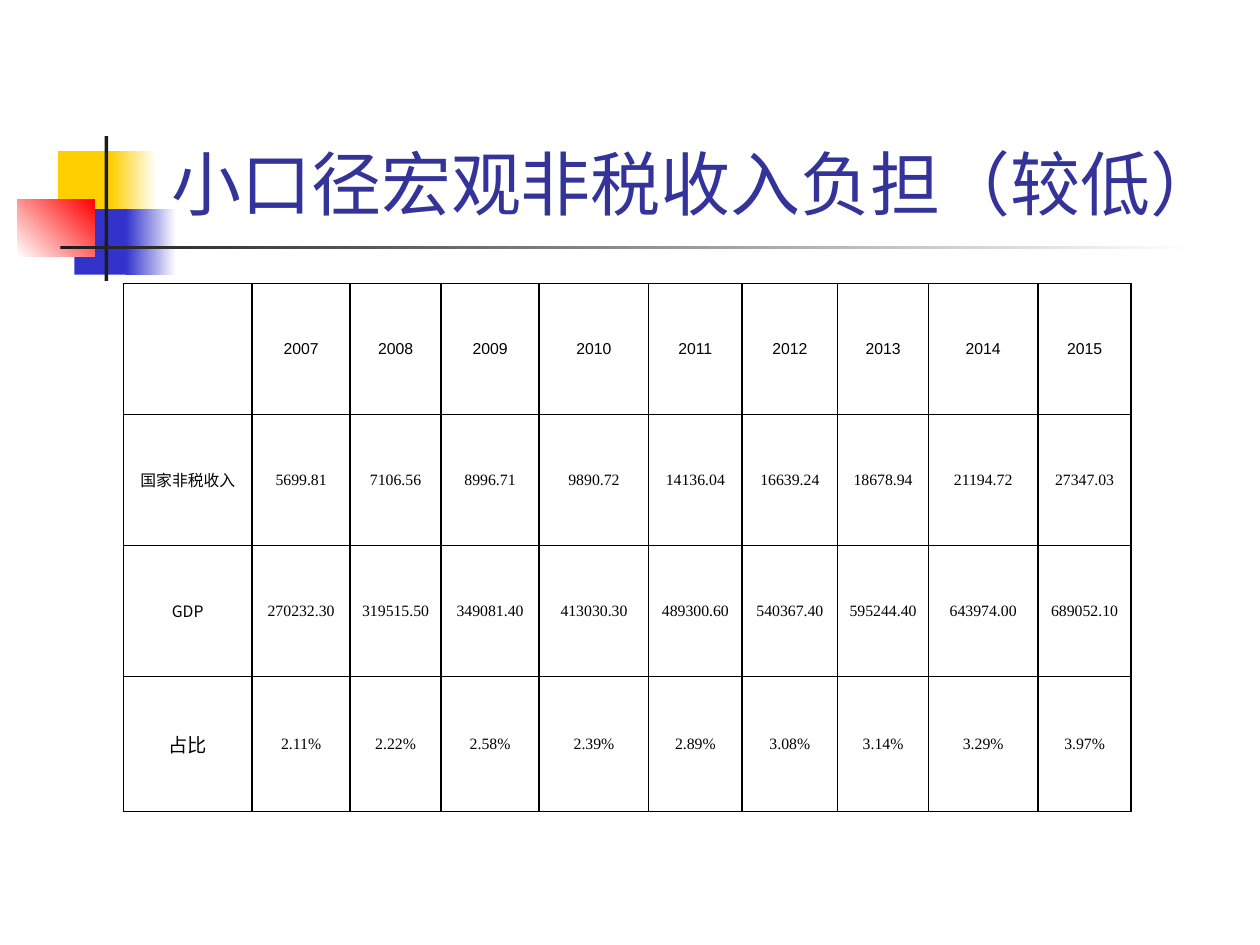
from lxml import etree
from pptx import Presentation
from pptx.dml.color import RGBColor
from pptx.enum.shapes import MSO_SHAPE
from pptx.enum.text import MSO_ANCHOR, MSO_AUTO_SIZE, PP_ALIGN
from pptx.oxml.ns import qn
from pptx.util import Inches, Pt

RECT = MSO_SHAPE.RECTANGLE
MIDDLE, BOTTOM = MSO_ANCHOR.MIDDLE, MSO_ANCHOR.BOTTOM
LEFT, CENTER = PP_ALIGN.LEFT, PP_ALIGN.CENTER
NO_FIT = MSO_AUTO_SIZE.NONE

BLACK = RGBColor(0x00, 0x00, 0x00)
WHITE = RGBColor(0xFF, 0xFF, 0xFF)
GOLD = RGBColor(0xFF, 0xCF, 0x01)
BLUE = RGBColor(0x33, 0x33, 0xCC)
RED = RGBColor(0xFF, 0x00, 0x00)
DARK = RGBColor(0x1C, 0x1C, 0x1C)
NAVY = RGBColor(0x33, 0x33, 0x99)

BARS = [
    ((0.46, 1.2, 0.48, 0.52), (GOLD,), 0),
    ((0.88, 1.2, 0.36, 0.52), (GOLD, WHITE), 0),
    ((0.59, 1.66, 0.46, 0.52), (BLUE,), 0),
    ((1, 1.66, 0.4, 0.52), (BLUE, WHITE), 0),
    ((0.14, 1.58, 0.61, 0.46), (WHITE, RED), 45),
    ((0.83, 1.08, 0.03, 1.15), (DARK,), 0),
    ((0.48, 1.95, 9, 0.03), (DARK, WHITE), 0),
]

TITLE = "小口径宏观非税收入负担（较低）"
COLS = [1.02, 0.78, 0.72, 0.78, 0.87, 0.74, 0.76, 0.72, 0.87, 0.74]
ROWS = [1.04, 1.04, 1.04, 1.07]
SERIF = "Times New Roman"
DATA = [
    ("", "Arial", 9, "Arial", [str(year) for year in range(2007, 2016)]),
    ("国家非税收入", "Calibri", 9, SERIF,
     ["5699.81", "7106.56", "8996.71", "9890.72", "14136.04",
      "16639.24", "18678.94", "21194.72", "27347.03"]),
    ("GDP", "Noto Sans CJK SC", 9, SERIF,
     ["270232.30", "319515.50", "349081.40", "413030.30", "489300.60",
      "540367.40", "595244.40", "643974.00", "689052.10"]),
    ("占比", "Calibri", 11, SERIF,
     ["2.11%", "2.22%", "2.58%", "2.39%", "2.89%",
      "3.08%", "3.14%", "3.29%", "3.97%"]),
]


def apply(item, values):
    """Set each attribute of an item from a dict."""
    for name, value in values.items():
        setattr(item, name, value)


def write(frame, text, align, size, font, color):
    """Put one formatted run of text into a frame."""
    para = frame.paragraphs[0]
    para.alignment = align
    run = para.add_run()
    run.text = text
    apply(run.font, {"size": Pt(size), "name": font})
    run.font.color.rgb = color


def add_bar(slide, box, colors, angle):
    """Add a borderless rectangle with a solid or gradient fill."""
    bar = slide.shapes.add_shape(RECT, *map(Inches, box))
    bar.shadow.inherit = False
    bar.line.fill.background()
    if len(colors) == 1:
        bar.fill.solid()
        bar.fill.fore_color.rgb = colors[0]
        return
    bar.fill.gradient()
    bar.fill.gradient_angle = angle
    for stop, color in zip(bar.fill.gradient_stops, colors):
        stop.color.rgb = color


def set_title(slide):
    """Fill the title and lift it above the bars."""
    title = slide.shapes.title
    apply(title, {"left": Inches(1.26), "top": Inches(0.6),
                  "width": Inches(8.62), "height": Inches(1.23)})
    frame = title.text_frame
    apply(frame, {"vertical_anchor": BOTTOM, "word_wrap": True,
                  "auto_size": NO_FIT})
    write(frame, TITLE, LEFT, 40, "Karla", NAVY)
    title.element.getparent().append(title.element)


def add_edges(cell):
    """Draw a thin black line on all sides of a cell."""
    props = cell._tc.get_or_add_tcPr()
    for side in ("lnL", "lnR", "lnT", "lnB"):
        line = etree.SubElement(props, qn(f"a:{side}"), w=str(Pt(1)))
        fill = etree.SubElement(line, qn("a:solidFill"))
        etree.SubElement(fill, qn("a:srgbClr"), val=str(BLACK))


def set_cell(cell, text, font, size):
    """Format one table cell and write its text."""
    gap = Inches(0.01)
    apply(cell, {"margin_left": gap, "margin_right": gap, "margin_top": gap,
                 "margin_bottom": gap, "vertical_anchor": MIDDLE})
    add_edges(cell)
    cell.fill.background()
    if text:
        write(cell.text_frame, text, CENTER, size, font, BLACK)


def add_grid(slide):
    """Add the table of yearly revenue figures."""
    box = (0.98, 2.25, sum(COLS), sum(ROWS))
    table = slide.shapes.add_table(
        len(ROWS), len(COLS), *map(Inches, box)).table
    apply(table, {"first_row": False, "horz_banding": False})
    for col, width in zip(table.columns, COLS):
        col.width = Inches(width)
    for row, height, record in zip(table.rows, ROWS, DATA):
        row.height = Inches(height)
        label, face, size, font, values = record
        cells = list(row.cells)
        set_cell(cells[0], label, face, size)
        for cell, value in zip(cells[1:], values):
            set_cell(cell, value, font, 9)


def main():
    """Build and save the slide."""
    deck = Presentation()
    apply(deck, {"slide_width": Inches(10), "slide_height": Inches(7.5)})
    slide = deck.slides.add_slide(deck.slide_layouts[5])
    for box, colors, angle in BARS:
        add_bar(slide, box, colors, angle)
    set_title(slide)
    add_grid(slide)
    deck.save("out.pptx")


if __name__ == "__main__":
    main()
